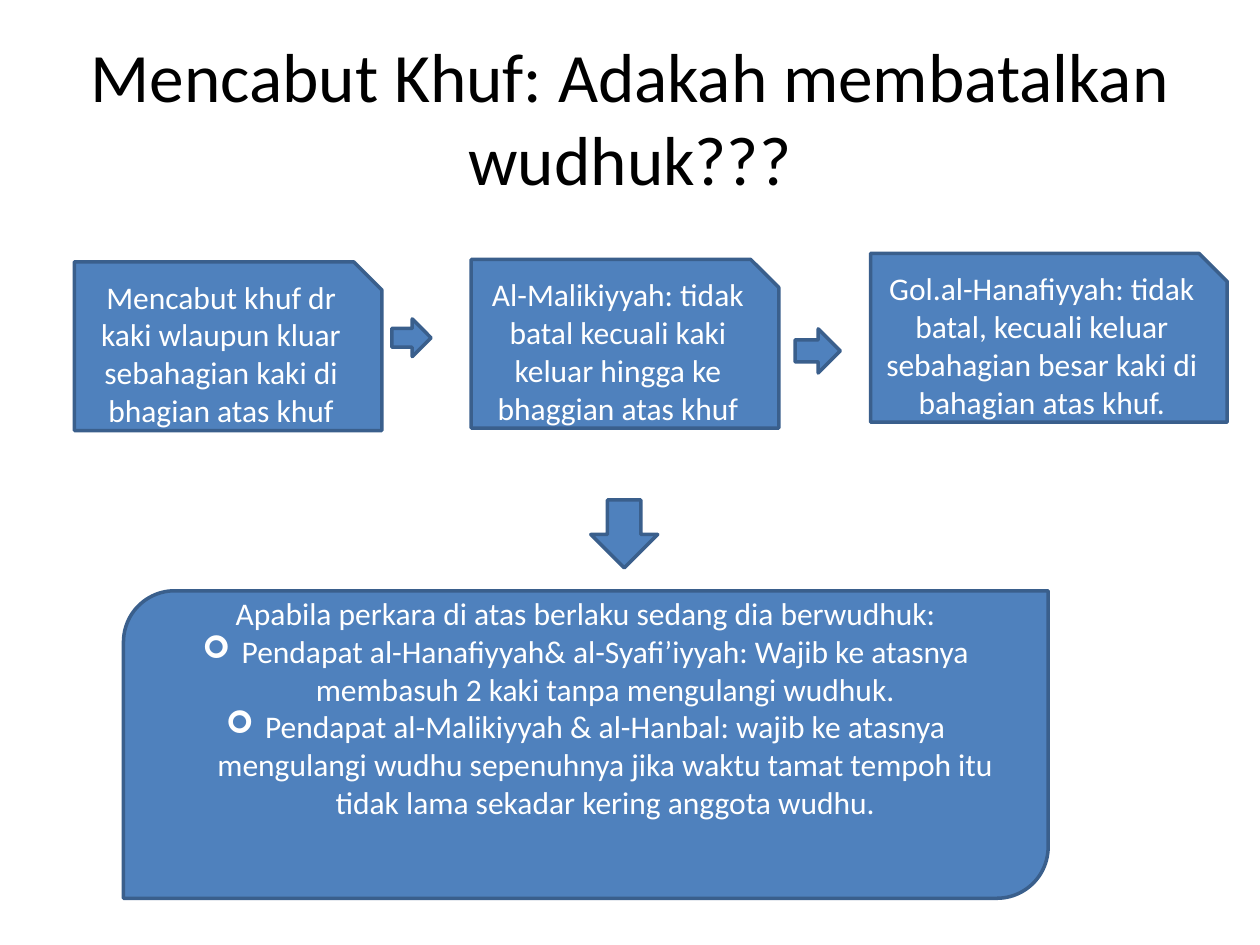
from dataclasses import dataclass

from lxml.etree import SubElement
from pptx import Presentation
from pptx.dml.color import RGBColor
from pptx.enum.shapes import MSO_SHAPE
from pptx.enum.text import MSO_ANCHOR, PP_ALIGN
from pptx.oxml.ns import qn
from pptx.util import Cm, Pt


@dataclass(frozen=True)
class Theme:
    font: str = "Calibri"
    title_size: float = 39.6
    body_size: float = 18
    title_color: RGBColor = RGBColor(0x00, 0x00, 0x00)
    body_color: RGBColor = RGBColor(0xFF, 0xFF, 0xFF)
    fill: RGBColor = RGBColor(0x4F, 0x81, 0xBD)
    outline: RGBColor = RGBColor(0x3A, 0x5F, 0x8C)
    outline_width: float = 2
    bullet_indent: float = 0.79


class SlideBuilder:
    def __init__(self, slide, theme):
        self.slide = slide
        self.theme = theme

    def style(self, paragraph, size, color):
        paragraph.alignment = PP_ALIGN.CENTER
        paragraph.font.name = self.theme.font
        paragraph.font.size = Pt(size)
        paragraph.font.color.rgb = color

    def title(self, text, left, top, width, height):
        box = self.slide.shapes.add_textbox(Cm(left), Cm(top), Cm(width), Cm(height))
        frame = box.text_frame
        frame.word_wrap = True
        frame.vertical_anchor = MSO_ANCHOR.MIDDLE
        frame.text = text
        self.style(frame.paragraphs[0], self.theme.title_size, self.theme.title_color)

    def shape(self, kind, left, top, width, height):
        shape = self.slide.shapes.add_shape(kind, Cm(left), Cm(top), Cm(width), Cm(height))
        shape.shadow.inherit = False
        shape.fill.solid()
        shape.fill.fore_color.rgb = self.theme.fill
        shape.line.color.rgb = self.theme.outline
        shape.line.width = Pt(self.theme.outline_width)
        return shape

    def text_shape(self, kind, left, top, width, height, text, bullets=()):
        frame = self.shape(kind, left, top, width, height).text_frame
        frame.word_wrap = True
        frame.vertical_anchor = MSO_ANCHOR.MIDDLE
        frame.text = text
        for bullet_text in bullets:
            paragraph = frame.add_paragraph()
            paragraph.text = bullet_text
            self.add_bullet(paragraph)
        for paragraph in frame.paragraphs:
            self.style(paragraph, self.theme.body_size, self.theme.body_color)
        return frame

    def add_bullet(self, paragraph):
        properties = paragraph._p.get_or_add_pPr()
        indent = Cm(self.theme.bullet_indent)
        properties.set("marL", str(indent))
        properties.set("indent", str(-indent))
        SubElement(properties, qn("a:buFont"), typeface="Wingdings")
        SubElement(properties, qn("a:buChar"), char="➢")


OPINIONS = [
    (1.5, 5.28, 6.2, "Mencabut khuf dr kaki wlaupun kluar sebahagian kaki di bhagian atas khuf"),
    (9.5, 5.23, 6.2, "Al-Malikiyyah: tidak batal kecuali kaki keluar hingga ke bhaggian atas khuf"),
    (17.55, 5.11, 7.19, "Gol.al-Hanafiyyah: tidak batal, kecuali keluar sebahagian besar kaki di "
                        "bahagian atas khuf."),
]
OPINION_HEIGHT = 3.4

ARROWS = [
    (MSO_SHAPE.RIGHT_ARROW, 7.9, 6.43, 0.79, 0.76),
    (MSO_SHAPE.RIGHT_ARROW, 16.03, 6.63, 0.91, 0.89),
    (MSO_SHAPE.DOWN_ARROW, 11.91, 10.08, 1.35, 1.37),
]

RULINGS = [
    "Pendapat al-Hanafiyyah& al-Syafi’iyyah: Wajib ke atasnya membasuh 2 kaki tanpa "
    "mengulangi wudhuk.",
    "Pendapat al-Malikiyyah & al-Hanbal: wajib ke atasnya mengulangi wudhu sepenuhnya "
    "jika waktu tamat tempoh itu tidak lama sekadar kering anggota wudhu.",
]


def main():
    presentation = Presentation()
    presentation.slide_width = Cm(25.4)
    presentation.slide_height = Cm(19.05)
    slide = presentation.slides.add_slide(presentation.slide_layouts[6])
    builder = SlideBuilder(slide, Theme())

    builder.title("Mencabut Khuf: Adakah membatalkan wudhuk???", 1.27, 0.76, 22.86, 3.18)
    for left, top, width, text in OPINIONS:
        builder.text_shape(MSO_SHAPE.SNIP_1_RECTANGLE, left, top, width, OPINION_HEIGHT, text)
    for arrow in ARROWS:
        builder.shape(*arrow)
    rulings = builder.text_shape(
        MSO_SHAPE.ROUND_2_DIAG_RECTANGLE, 2.49, 11.91, 18.64, 6.2,
        "Apabila perkara di atas berlaku sedang dia berwudhuk:", RULINGS)
    rulings.margin_top = Cm(0)
    rulings.margin_bottom = Cm(1.5)

    presentation.save("out.pptx")


if __name__ == "__main__":
    main()
